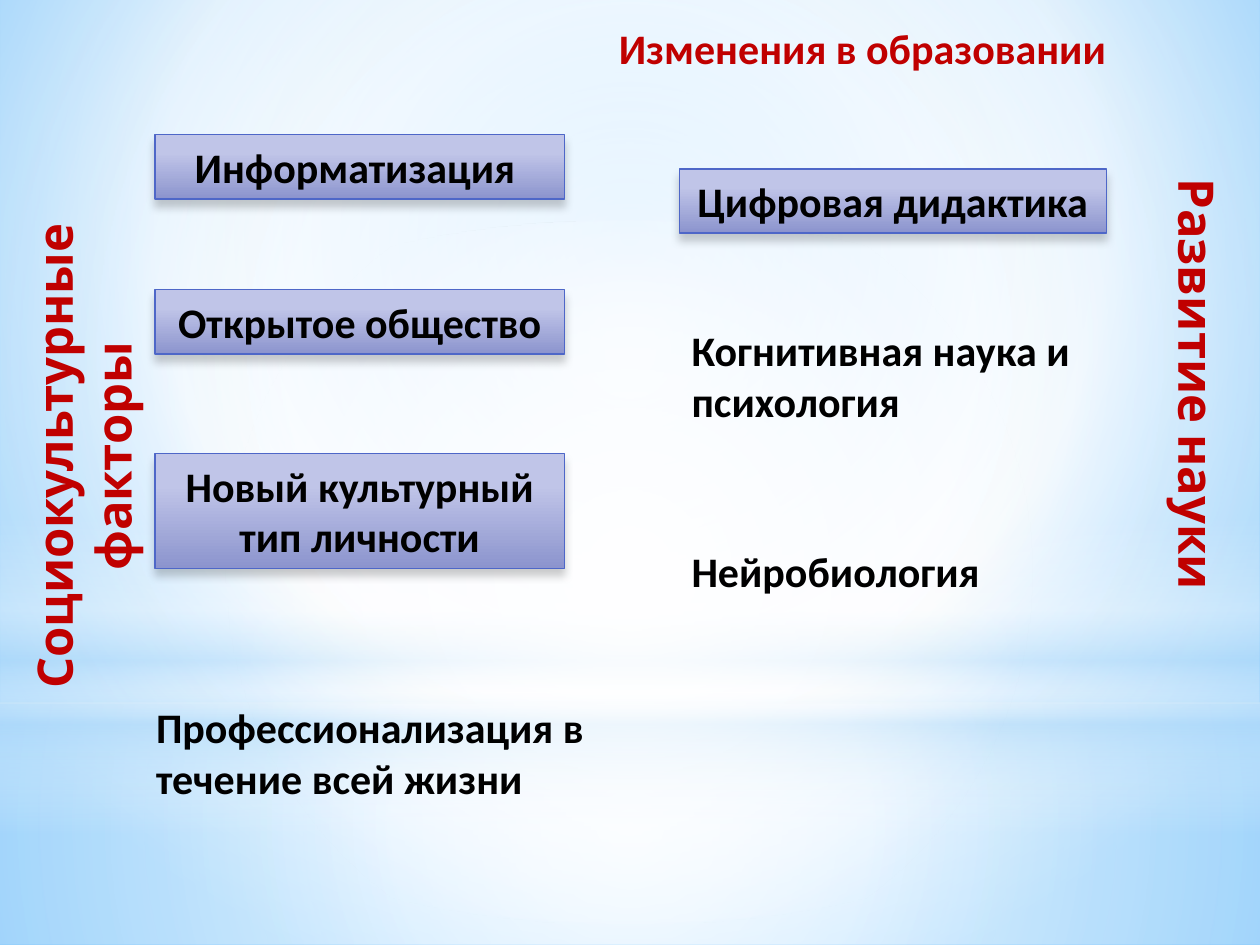
from lxml import etree
from pptx import Presentation
from pptx.dml.color import RGBColor
from pptx.enum.shapes import MSO_SHAPE
from pptx.enum.text import MSO_AUTO_SIZE, PP_ALIGN
from pptx.oxml.ns import qn
from pptx.util import Inches, Pt

RECTANGLE, OVAL = MSO_SHAPE.RECTANGLE, MSO_SHAPE.OVAL
LEFT, CENTER = PP_ALIGN.LEFT, PP_ALIGN.CENTER
FIT_SHAPE = MSO_AUTO_SIZE.SHAPE_TO_FIT_TEXT

RED, BLACK, WHITE, SKY, BORDER = "C00000", "000000", "FFFFFF", "B4DCFA", "4E67C8"
MIDDLE = (50, 50, 50, 50)
CARD_STOPS = [(28, "C0C5E8", 100), (100, "8C94CE", 100)]


def color(hex_code):
    return RGBColor.from_string(hex_code)


def add_child(parent, tag, **attributes):
    child = etree.SubElement(parent, qn(tag))
    for key, value in attributes.items():
        child.set(key, str(value))
    return child


def add_color(parent, hex_code, opacity):
    tint = add_child(parent, "a:srgbClr", val=hex_code)
    if opacity < 100:
        add_child(tint, "a:alpha", val=opacity * 1000)


def set_gradient(fill, properties, stops, focus=None):
    """Fill with (position, colour, opacity) stops: circular around focus, or top to bottom."""
    fill.solid()
    solid = properties.find(qn("a:solidFill"))
    gradient = etree.Element(qn("a:gradFill"), rotWithShape="1")
    stop_list = add_child(gradient, "a:gsLst")
    for position, hex_code, opacity in stops:
        add_color(add_child(stop_list, "a:gs", pos=position * 1000), hex_code, opacity)
    if focus:
        circle = add_child(gradient, "a:path")
        circle.set("path", "circle")
        sides = {side: share * 1000 for side, share in zip("ltrb", focus)}
        add_child(circle, "a:fillToRect", **sides)
    else:
        add_child(gradient, "a:lin", ang=90 * 60000, scaled=0)
    properties.replace(solid, gradient)


def add_gradient_shape(slide, kind, box, stops, focus=None):
    shape = slide.shapes.add_shape(kind, *map(Inches, box))
    shape.shadow.inherit = False
    shape.line.fill.background()
    set_gradient(shape.fill, shape.element.spPr, stops, focus)
    return shape


def write_text(shape, text, align, hex_code=BLACK, font="Calibri", size=24):
    frame = shape.text_frame
    frame.word_wrap = True
    frame.auto_size = FIT_SHAPE
    paragraph = frame.paragraphs[0]
    paragraph.text = text
    paragraph.alignment = align
    paragraph.font.name = font
    paragraph.font.size = Pt(size)
    paragraph.font.bold = True
    paragraph.font.color.rgb = color(hex_code)


def add_card(slide, box, text):
    card = add_gradient_shape(slide, RECTANGLE, box, CARD_STOPS)
    card.line.color.rgb = color(BORDER)
    card.line.width = Pt(0.75)
    effects = card.element.spPr.find(qn("a:effectLst"))
    shadow = add_child(effects, "a:outerShdw", blurRad=Pt(5), dist=Pt(4),
                       dir=90 * 60000, rotWithShape=0)
    add_color(shadow, BLACK, 20)
    write_text(card, text, CENTER)


def add_label(slide, box, text, align=LEFT, **style):
    label = slide.shapes.add_textbox(*map(Inches, box))
    write_text(label, text, align, **style)
    return label


def add_side_heading(slide, box, text, direction, align):
    heading = add_label(slide, box, text, align, hex_code=RED, font="Cabin", size=28)
    heading.text_frame._txBody.bodyPr.set("vert", direction)


def add_backdrop(slide, width, height):
    fill = slide.background.fill
    fill.solid()
    properties = slide.element.find(".//" + qn("p:bgPr"))
    set_gradient(fill, properties,
                 [(0, "9ED5FF", 100), (60, WHITE, 100), (100, "5BB9FF", 100)],
                 (20, 10, 20, 60))
    horizon = 5.58
    add_gradient_shape(slide, RECTANGLE, (0, horizon, width, height - horizon),
                       [(0, WHITE, 91), (37, WHITE, 76), (100, SKY, 79)], MIDDLE)
    add_gradient_shape(slide, RECTANGLE, (0, 0, width, horizon),
                       [(0, WHITE, 89), (48, WHITE, 62), (100, SKY, 79)], MIDDLE)
    add_gradient_shape(slide, RECTANGLE, (0, 4.12, width, 2.5),
                       [(0, WHITE, 0), (29, WHITE, 30), (45, SKY, 40),
                        (55, WHITE, 26), (65, SKY, 60), (100, WHITE, 0)])
    add_gradient_shape(slide, OVAL, (0, 1.75, width, horizon),
                       [(0, WHITE, 100), (56, WHITE, 0)], MIDDLE)


def add_social_factors(slide, left, top):
    add_side_heading(slide, (left, top, 0.67, 5.62), "Социокультурные факторы",
                     "vert270", CENTER)
    for offset, height, text in [(0.26, 0.51, "Информатизация "),
                                 (1.49, 0.51, "Открытое общество"),
                                 (2.79, 0.91, "Новый культурный тип личности")]:
        add_card(slide, (left + 1.09, top + offset, 3.25, height), text)
    add_label(slide, (left + 1, top + 4.71, 3.64, 0.91),
              "Профессионализация в течение всей жизни")


def add_science_progress(slide, left, top):
    add_card(slide, (left, top + 0.02, 3.39, 0.51), "Цифровая дидактика")
    add_label(slide, (left, top + 1.21, 3.39, 0.91), "Когнитивная наука и психология")
    add_label(slide, (left, top + 2.96, 2.87, 0.5), "Нейробиология")
    add_side_heading(slide, (left + 3.73, top, 0.67, 4.3), "Развитие науки", "vert", LEFT)


def main():
    width, height = 10, 7.5
    presentation = Presentation()
    presentation.slide_width = Inches(width)
    presentation.slide_height = Inches(height)
    slide = presentation.slides.add_slide(presentation.slide_layouts[6])
    add_backdrop(slide, width, height)
    add_label(slide, (3.89, 0.13, 5.91, 0.5), "Изменения в образовании",
              CENTER, hex_code=RED)
    add_social_factors(slide, 0.14, 0.81)
    add_science_progress(slide, 5.39, 1.32)
    presentation.save("out.pptx")


if __name__ == "__main__":
    main()
